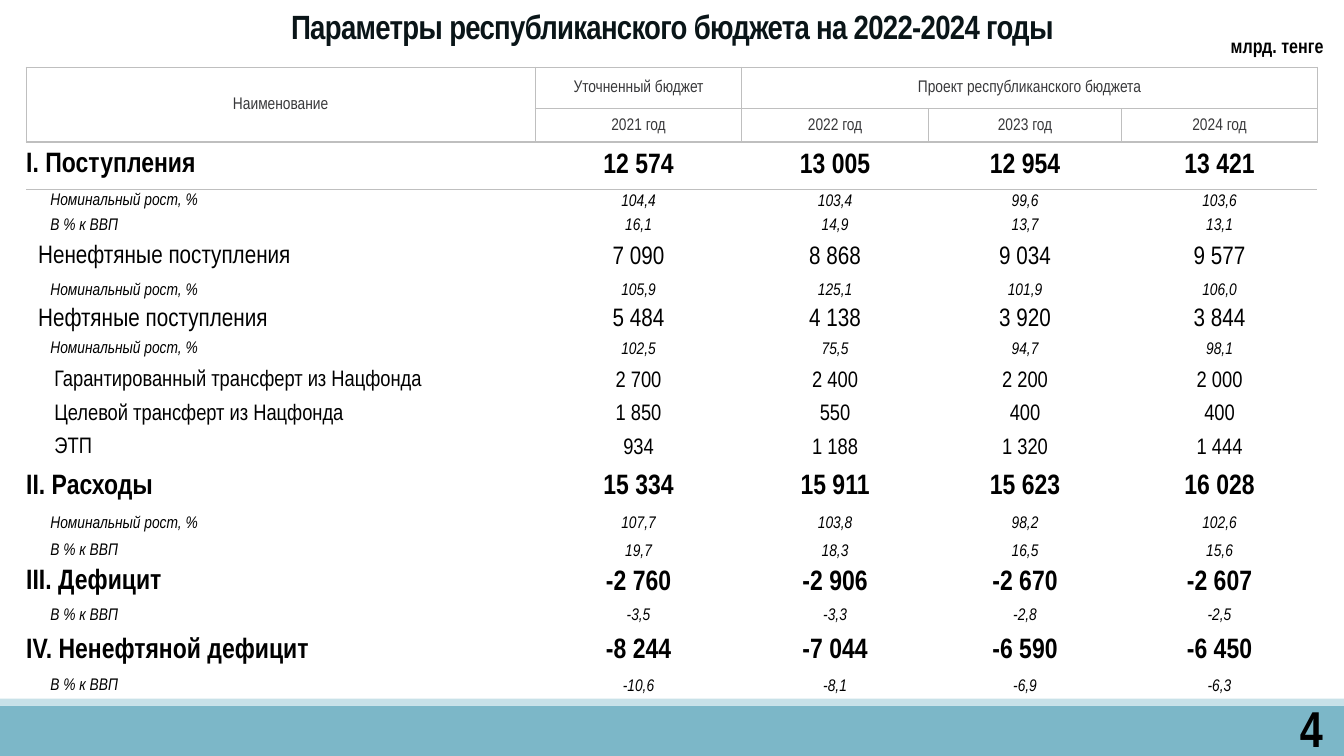
from dataclasses import dataclass

from lxml import etree
from pptx import Presentation
from pptx.dml.color import RGBColor
from pptx.enum import shapes as sh, text as tx
from pptx.oxml import ns
from pptx.util import Pt

FACE = "Arial Narrow"
BLACK = RGBColor(0x00, 0x00, 0x00)
INK = RGBColor(0x0A, 0x15, 0x18)
GREY = RGBColor(0x38, 0x38, 0x3A)
RULE = RGBColor(0xBF, 0xBF, 0xBF)
TEAL = RGBColor(0x7C, 0xB7, 0xC8)
PALE = RGBColor(0xC8, 0xE1, 0xE8)
NO_STYLE = "{2D5ABB26-0587-4C30-8999-92F81FD0307C}"
LEFT, MID, RIGHT = tx.PP_ALIGN.LEFT, tx.PP_ALIGN.CENTER, tx.PP_ALIGN.RIGHT


@dataclass(frozen=True)
class Style:
    size: float
    color: RGBColor = BLACK
    bold: bool = False
    slant: bool = False
    indent: float = 0


@dataclass(frozen=True)
class Row:
    style: Style
    high: float
    label: str
    values: tuple[str, ...]


@dataclass(frozen=True)
class Bar:
    top: float
    high: float
    color: RGBColor


HEAD = Style(12, GREY, indent=0.7)
MAIN = Style(20, bold=True)
RATE = Style(12, slant=True, indent=17.3)
PART = Style(18, indent=8.6)
ITEM = Style(16, indent=20.2)
GROWTH, SHARE = "Номинальный рост, %", "В % к ВВП"

COLS = (363.6, 147.6, 133.2, 138.2, 139.7)
ROWS = (
    Row(HEAD, 29.5, "Наименование", ("Уточненный бюджет", "Проект республиканского бюджета", "", "")),
    Row(HEAD, 23.8, "", ("2021 год", "2022 год", "2023 год", "2024 год")),
    Row(MAIN, 33.8, "I. Поступления", ("12 574", "13 005", "12 954", "13 421")),
    Row(RATE, 17.3, GROWTH, ("104,4", "103,4", "99,6", "103,6")),
    Row(RATE, 17.3, SHARE, ("16,1", "14,9", "13,7", "13,1")),
    Row(PART, 28.1, "Ненефтяные поступления", ("7 090", "8 868", "9 034", "9 577")),
    Row(RATE, 19.4, GROWTH, ("105,9", "125,1", "101,9", "106,0")),
    Row(PART, 22.3, "Нефтяные поступления", ("5 484", "4 138", "3 920", "3 844")),
    Row(RATE, 20.2, GROWTH, ("102,5", "75,5", "94,7", "98,1")),
    Row(ITEM, 24.5, "Гарантированный трансферт из Нацфонда", ("2 700", "2 400", "2 200", "2 000")),
    Row(ITEM, 23.8, "Целевой трансферт из Нацфонда", ("1 850", "550", "400", "400")),
    Row(ITEM, 23.8, "ЭТП", ("934", "1 188", "1 320", "1 444")),
    Row(MAIN, 31.7, "II. Расходы", ("15 334", "15 911", "15 623", "16 028")),
    Row(RATE, 21.6, GROWTH, ("107,7", "103,8", "98,2", "102,6")),
    Row(RATE, 17.3, SHARE, ("19,7", "18,3", "16,5", "15,6")),
    Row(MAIN, 27.4, "III. Дефицит", ("-2 760", "-2 906", "-2 670", "-2 607")),
    Row(RATE, 20.2, SHARE, ("-3,5", "-3,3", "-2,8", "-2,5")),
    Row(MAIN, 30.2, "IV. Ненефтяной дефицит", ("-8 244", "-7 044", "-6 590", "-6 450")),
    Row(RATE, 20.2, SHARE, ("-10,6", "-8,1", "-6,9", "-6,3")),
)
BARS = (Bar(504, 36, TEAL), Bar(499, 5, PALE))


def write(frame, words: str, style: Style, align, lead: float = 1):
    """Put one styled run in the frame's first paragraph and return it."""
    para = frame.paragraphs[0]
    para.alignment = align
    para.line_spacing = lead
    run = para.add_run()
    run.text = words
    font = run.font
    font.name, font.size = FACE, Pt(style.size)
    font.bold, font.italic = style.bold, style.slant
    font.color.rgb = style.color
    return run


def setup(frame) -> None:
    frame.word_wrap = True
    frame.auto_size = tx.MSO_AUTO_SIZE.NONE
    frame.vertical_anchor = tx.MSO_ANCHOR.MIDDLE


def add_bar(slide, bar: Bar) -> None:
    shape = slide.shapes.add_shape(sh.MSO_SHAPE.RECTANGLE, 0, Pt(bar.top), Pt(960), Pt(bar.high))
    shape.shadow.inherit = False
    shape.fill.solid()
    shape.fill.fore_color.rgb = bar.color
    shape.line.fill.background()


def add_label(slide, box: tuple[float, ...], words: str, style: Style, lead: float = 1) -> None:
    frame = slide.shapes.add_textbox(*map(Pt, box)).text_frame
    setup(frame)
    write(frame, words, style, RIGHT, lead)


def add_title(slide, words: str) -> None:
    title = slide.shapes.title
    title.left, title.top, title.width, title.height = Pt(0), Pt(0), Pt(960), Pt(41.8)
    setup(title.text_frame)
    run = write(title.text_frame, words, Style(24, INK, bold=True), MID, 0.85)
    run.font._element.set("spc", "-50")


def rule(cell, sides: str) -> None:
    """Draw grey borders on the given sides, in the order L, R, T, B."""
    props = cell._tc.get_or_add_tcPr()
    for side in sides:
        line = etree.SubElement(props, ns.qn(f"a:ln{side}"), w=str(Pt(1)))
        fill = etree.SubElement(line, ns.qn("a:solidFill"))
        etree.SubElement(fill, ns.qn("a:srgbClr"), val=str(RULE))


def fill_cell(cell, words: str, style: Style, first: bool, sides: str) -> None:
    rule(cell, sides)
    cell.fill.background()
    cell.vertical_anchor = tx.MSO_ANCHOR.MIDDLE
    edge = 0 if first and style != HEAD else 0.7
    cell.margin_left = Pt(style.indent if first else 0.7)
    cell.margin_top = cell.margin_right = Pt(edge)
    cell.margin_bottom = Pt(0)
    if words:
        write(cell.text_frame, words, style, LEFT if first and style != HEAD else MID)


def add_budget(slide) -> None:
    high = sum(row.high for row in ROWS)
    frame = slide.shapes.add_table(len(ROWS), len(COLS), Pt(18.7), Pt(48.2), Pt(sum(COLS)), Pt(high))
    grid = frame.table
    grid.first_row = grid.horz_banding = False
    grid._tbl.tblPr.find(ns.qn("a:tableStyleId")).text = NO_STYLE
    for col, wide in zip(grid.columns, COLS):
        col.width = Pt(wide)
    for y, row in enumerate(ROWS):
        grid.rows[y].height = Pt(row.high)
        sides = "LRTB" if row.style == HEAD else "T" if y == 2 else ""
        for x, words in enumerate((row.label, *row.values)):
            fill_cell(grid.cell(y, x), words, row.style, x == 0, sides)
    grid.cell(0, 0).merge(grid.cell(1, 0))
    grid.cell(0, 2).merge(grid.cell(0, 4))


def main() -> None:
    deck = Presentation()
    deck.slide_width, deck.slide_height = Pt(960), Pt(540)
    slide = deck.slides.add_slide(deck.slide_layouts[5])
    for bar in BARS:
        add_bar(slide, bar)
    add_title(slide, "Параметры республиканского бюджета на 2022-2024 годы")
    add_label(slide, (849, 505.4, 103, 28.8), "4", Style(36, bold=True))
    add_budget(slide)
    add_label(slide, (864, 23.8, 88.6, 20.2), "млрд. тенге", Style(14, bold=True), 0.9)
    deck.save("out.pptx")


if __name__ == "__main__":
    main()
